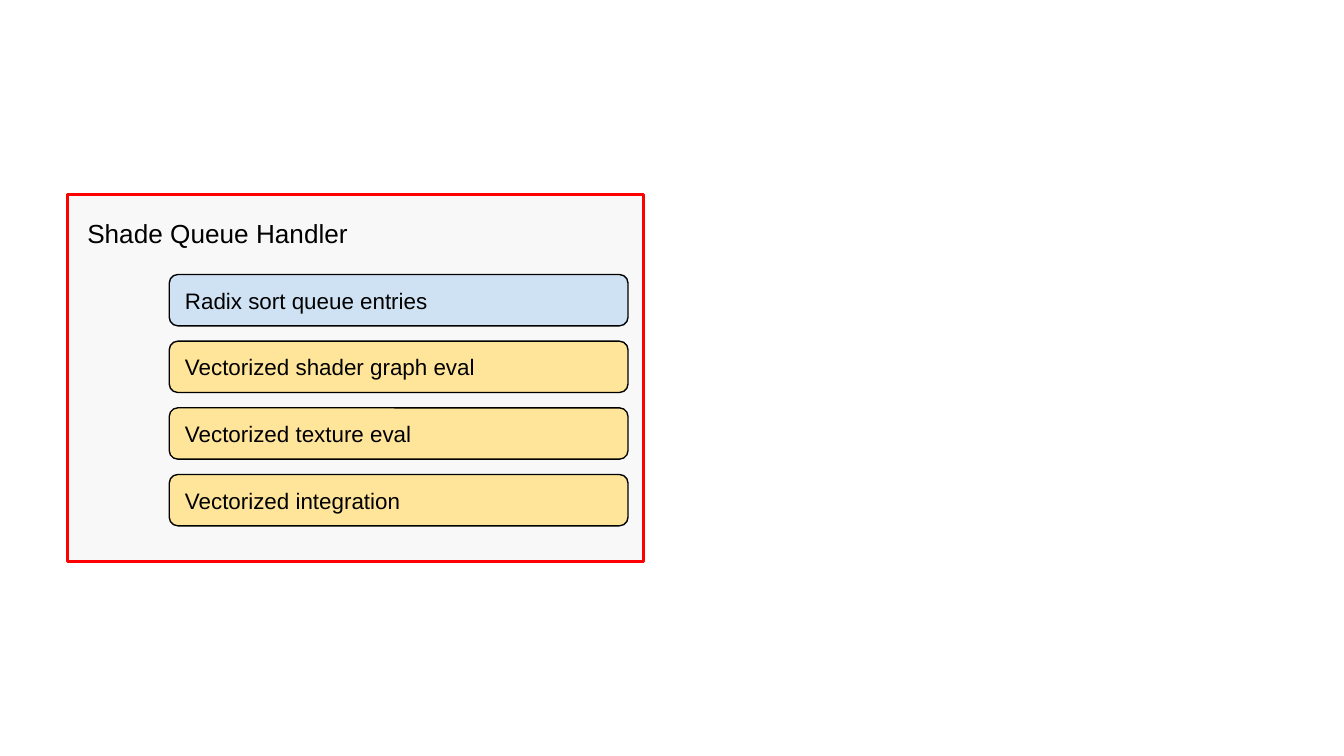
from dataclasses import dataclass

from pptx import Presentation
from pptx.dml.color import RGBColor
from pptx.enum.shapes import MSO_SHAPE
from pptx.enum.text import MSO_ANCHOR, PP_ALIGN
from pptx.shapes.autoshape import Shape
from pptx.slide import Slide
from pptx.util import Cm, Pt

RECTANGLE = MSO_SHAPE.RECTANGLE
ROUNDED = MSO_SHAPE.ROUNDED_RECTANGLE
TOP = MSO_ANCHOR.TOP
MIDDLE = MSO_ANCHOR.MIDDLE
LEFT = PP_ALIGN.LEFT

BLACK = "000000"
RED = "FF0000"
LIGHT_GREY = "F8F8F8"
BLUE = "CFE2F3"
YELLOW = "FFE599"

FONT = "Arial"
INSET = Cm(0.25)
FIRST_STEP_TOP = 5.19
STEP_PITCH = 1.26


@dataclass(frozen=True)
class Box:
    left: float
    top: float
    width: float
    height: float


@dataclass(frozen=True)
class Step:
    label: str
    fill: str


STEPS = [
    Step("Radix sort queue entries", BLUE),
    Step("Vectorized shader graph eval", YELLOW),
    Step("Vectorized texture eval", YELLOW),
    Step("Vectorized integration", YELLOW),
]


def color(value: str) -> RGBColor:
    return RGBColor.from_string(value)


def lengths(box: Box) -> tuple[Cm, Cm, Cm, Cm]:
    return Cm(box.left), Cm(box.top), Cm(box.width), Cm(box.height)


def write(holder: Shape, text: str, size: float, anchor: MSO_ANCHOR) -> None:
    frame = holder.text_frame
    frame.word_wrap = True
    frame.vertical_anchor = anchor
    frame.margin_left = frame.margin_right = INSET
    frame.margin_top = frame.margin_bottom = INSET
    frame.text = text
    paragraph = frame.paragraphs[0]
    paragraph.alignment = LEFT
    font = paragraph.runs[0].font
    font.name = FONT
    font.size = Pt(size)
    font.color.rgb = color(BLACK)


def draw_panel(slide: Slide, kind: MSO_SHAPE, box: Box, fill: str,
               outline: str, weight: float) -> Shape:
    panel = slide.shapes.add_shape(kind, *lengths(box))
    panel.shadow.inherit = False
    panel.fill.solid()
    panel.fill.fore_color.rgb = color(fill)
    panel.line.color.rgb = color(outline)
    panel.line.width = Pt(weight)
    return panel


def draw_step(slide: Slide, step: Step, row: int) -> None:
    box = Box(3.2, FIRST_STEP_TOP + row * STEP_PITCH, 8.67, 0.97)
    bar = draw_panel(slide, ROUNDED, box, step.fill, BLACK, 0.75)
    write(bar, step.label, 12, MIDDLE)


def main() -> None:
    deck = Presentation()
    deck.slide_width = Cm(25.4)
    deck.slide_height = Cm(14.29)
    slide = deck.slides.add_slide(deck.slide_layouts[6])

    draw_panel(slide, RECTANGLE, Box(1.27, 3.67, 10.9, 6.95), LIGHT_GREY, RED, 1.5)
    for row, step in enumerate(STEPS):
        draw_step(slide, step, row)
    heading = slide.shapes.add_textbox(*lengths(Box(1.4, 3.86, 7.47, 1.04)))
    write(heading, "Shade Queue Handler", 14, TOP)

    deck.save("out.pptx")


if __name__ == "__main__":
    main()
